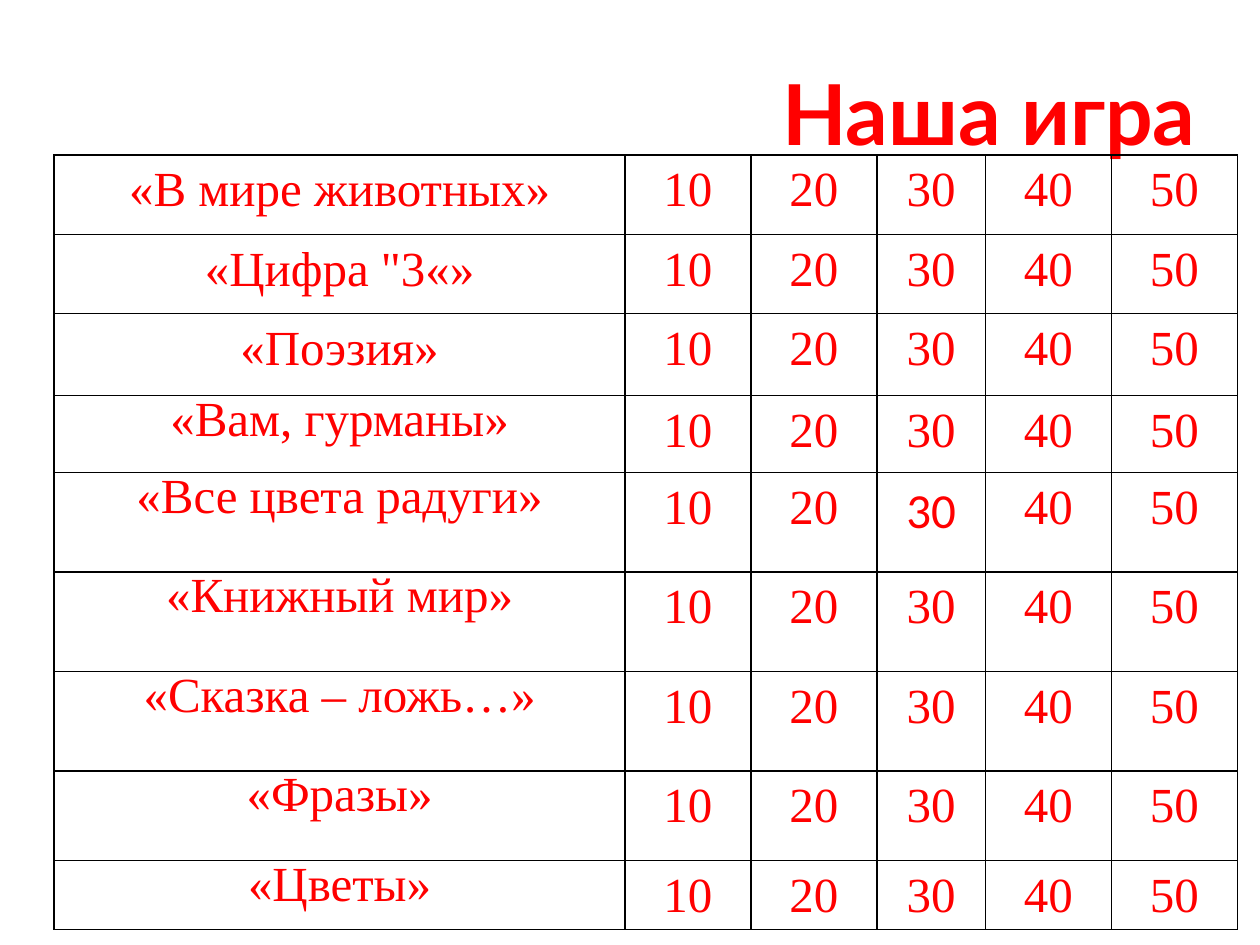
from lxml import etree
from pptx import Presentation
from pptx.dml.color import RGBColor
from pptx.enum.text import MSO_ANCHOR, PP_ALIGN
from pptx.oxml.ns import qn
from pptx.util import Inches, Pt

CENTER, RIGHT = PP_ALIGN.CENTER, PP_ALIGN.RIGHT
MIDDLE = MSO_ANCHOR.MIDDLE
SLIDE_WIDTH, SLIDE_HEIGHT = 10, 7.5
RED, BLACK = "FF0000", "000000"
SERIF = "Times New Roman"

CATEGORIES = [
    "«В мире животных»", "«Цифра \"3«»", "«Поэзия»", "«Вам, гурманы»",
    "«Все цвета радуги»", "«Книжный мир»", "«Сказка – ложь…»", "«Фразы»",
    "«Цветы»",
]
POINTS = ["10", "20", "30", "40", "50"]
COLUMN_WIDTHS = [4.53, 1, 1, 0.86, 1, 1]
ROW_HEIGHTS = [0.63, 0.63, 0.65, 0.61, 0.79, 0.79, 0.79, 0.71, 0.55]
FIRST_COMPACT_ROW = 3
COMPACT_LINE = 14.7
SANS_CELL = (4, 3)


def color(hex_code):
    return RGBColor.from_string(hex_code)


def write(paragraph, text, font, size, align, bold=False):
    paragraph.alignment = align
    run = paragraph.add_run()
    run.text = text
    run.font.name = font
    run.font.size = Pt(size)
    run.font.bold = bold
    run.font.color.rgb = color(RED)


def outline(cell):
    """Draw a thin border on all four sides of a cell."""
    properties = cell._tc.get_or_add_tcPr()
    for position, side in enumerate(("a:lnL", "a:lnR", "a:lnT", "a:lnB")):
        line = etree.Element(qn(side), w=str(Pt(1)))
        fill = etree.SubElement(line, qn("a:solidFill"))
        etree.SubElement(fill, qn("a:srgbClr"), val=BLACK)
        properties.insert(position, line)


def add_title(slide, left, top, width, height):
    box = slide.shapes.add_textbox(*map(Inches, (left, top, width, height)))
    frame = box.text_frame
    frame.word_wrap = True
    frame.vertical_anchor = MIDDLE
    write(frame.paragraphs[0], "Наша игра", "Lato", 48, RIGHT, bold=True)


def fill_cell(cell, text, font, compact):
    cell.fill.background()
    cell.margin_left = cell.margin_right = Inches(0.07)
    cell.margin_top = Pt(COMPACT_LINE) if compact else 0
    cell.margin_bottom = 0
    paragraph = cell.text_frame.paragraphs[0]
    paragraph.line_spacing = Pt(COMPACT_LINE) if compact else 1.15
    write(paragraph, text, font, 28, CENTER)
    outline(cell)


def add_board(slide, left, top, width, height):
    board = slide.shapes.add_table(
        len(CATEGORIES), len(POINTS) + 1,
        *map(Inches, (left, top, width, height))).table
    board.first_row = board.horz_banding = False
    for column, share in zip(board.columns, COLUMN_WIDTHS):
        column.width = Inches(width * share / sum(COLUMN_WIDTHS))
    for row, share in zip(board.rows, ROW_HEIGHTS):
        row.height = Inches(height * share / sum(ROW_HEIGHTS))
    for r, category in enumerate(CATEGORIES):
        for c, text in enumerate([category, *POINTS]):
            font = "Calibri" if (r, c) == SANS_CELL else SERIF
            compact = c == 0 and r >= FIRST_COMPACT_ROW
            fill_cell(board.cell(r, c), text, font, compact)


def main():
    deck = Presentation()
    deck.slide_width = Inches(SLIDE_WIDTH)
    deck.slide_height = Inches(SLIDE_HEIGHT)
    slide = deck.slides.add_slide(deck.slide_layouts[6])
    add_title(slide, 0.042 * SLIDE_WIDTH, 0.09 * SLIDE_HEIGHT,
              0.917 * SLIDE_WIDTH, 0.056 * SLIDE_HEIGHT)
    add_board(slide, 0.043 * SLIDE_WIDTH, 0.164 * SLIDE_HEIGHT,
              sum(COLUMN_WIDTHS), sum(ROW_HEIGHTS))
    deck.save("out.pptx")


if __name__ == "__main__":
    main()
